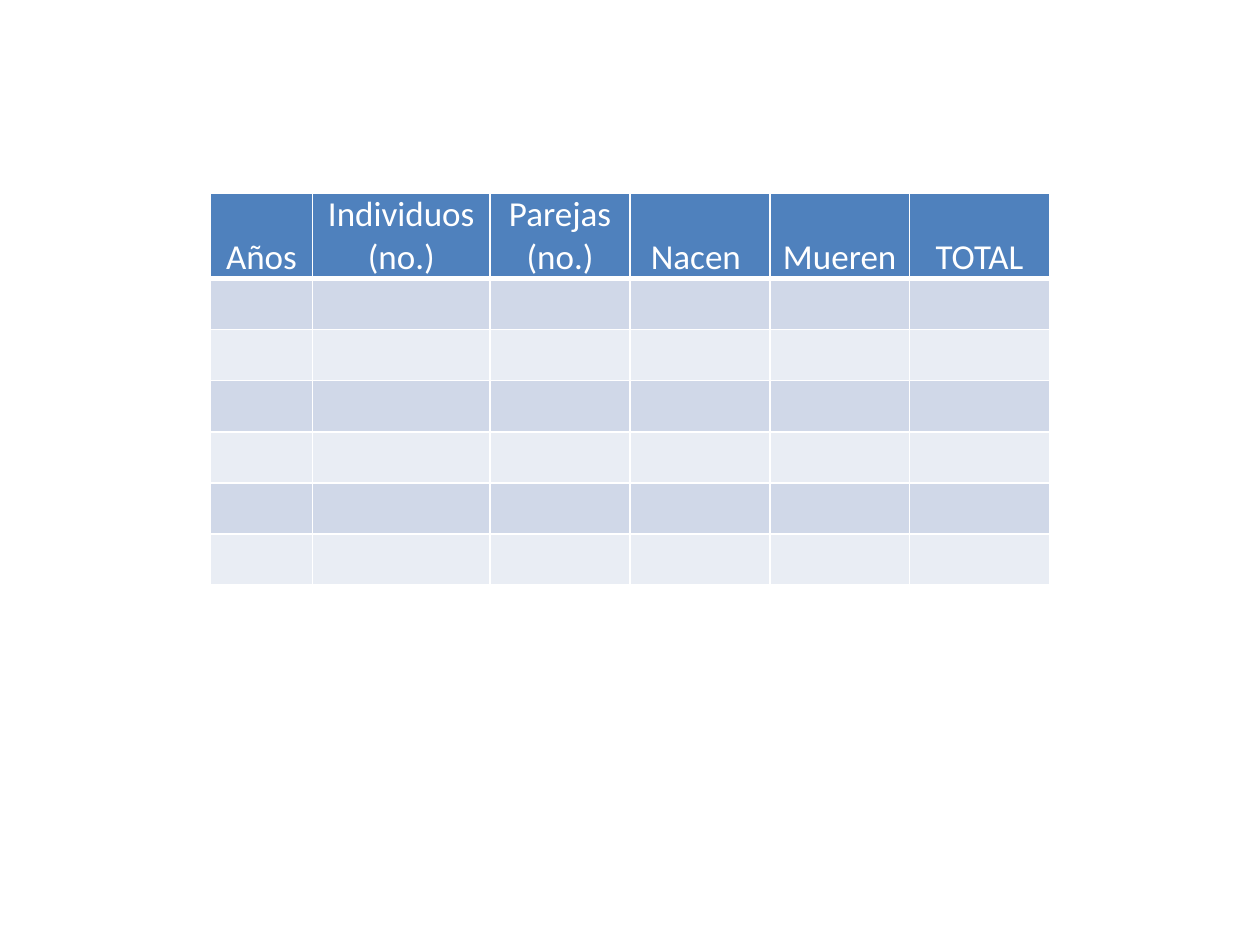
"""Build a slide with an empty population table to fill in by year."""
from lxml import etree
from pptx import Presentation
from pptx.dml.color import RGBColor
from pptx.enum.text import MSO_ANCHOR, PP_ALIGN
from pptx.oxml.ns import qn
from pptx.util import Inches, Pt

CENTER = PP_ALIGN.CENTER
BOTTOM = MSO_ANCHOR.BOTTOM
WHITE = RGBColor(0xFF, 0xFF, 0xFF)
HEADER_BLUE = RGBColor(0x4F, 0x81, 0xBD)
BANDS = (RGBColor(0xD0, 0xD8, 0xE8), RGBColor(0xE9, 0xED, 0xF4))

COLUMNS = [
    ("Años", 0.81),
    ("Individuos (no.)", 1.41),
    ("Parejas (no.)", 1.11),
    ("Nacen ", 1.11),
    ("Mueren", 1.11),
    ("TOTAL", 1.11),
]
YEAR_ROWS = 6
LEFT, TOP, ROW_HEIGHT = 1.67, 1.53, 0.405


def set_borders(cell, widths):
    properties = cell._tc.get_or_add_tcPr()
    for side, width in widths.items():
        line = etree.SubElement(properties, qn(f"a:ln{side}"), w=str(Pt(width)))
        fill = etree.SubElement(line, qn("a:solidFill"))
        etree.SubElement(fill, qn("a:srgbClr"), val=str(WHITE))


def fill_cell(cell, color):
    cell.fill.solid()
    cell.fill.fore_color.rgb = color


def write_heading(cell, text):
    cell.vertical_anchor = BOTTOM
    cell.margin_left = cell.margin_right = 0
    cell.margin_top = cell.margin_bottom = 0
    para = cell.text_frame.paragraphs[0]
    para.alignment = CENTER
    span = para.add_run()
    span.text = text
    span.font.name = "Calibri"
    span.font.size = Pt(20)
    span.font.bold = False
    span.font.color.rgb = WHITE


def main():
    deck = Presentation()
    deck.slide_width, deck.slide_height = Inches(10), Inches(7.5)
    page = deck.slides.add_slide(deck.slide_layouts[6])
    row_count = YEAR_ROWS + 1
    width = sum(size for _, size in COLUMNS)
    table = page.shapes.add_table(
        row_count, len(COLUMNS), Inches(LEFT), Inches(TOP),
        Inches(width), Inches(row_count * ROW_HEIGHT),
    ).table

    for column, (heading, size) in enumerate(COLUMNS):
        table.columns[column].width = Inches(size)
        for row in range(row_count):
            cell = table.cell(row, column)
            top = 3 if row == 1 else 1
            bottom = 3 if row == 0 else 1
            set_borders(cell, {"L": 1, "R": 1, "T": top, "B": bottom})
            fill_cell(cell, BANDS[(row - 1) % 2] if row else HEADER_BLUE)
        write_heading(table.cell(0, column), heading)

    deck.save("out.pptx")


if __name__ == "__main__":
    main()
